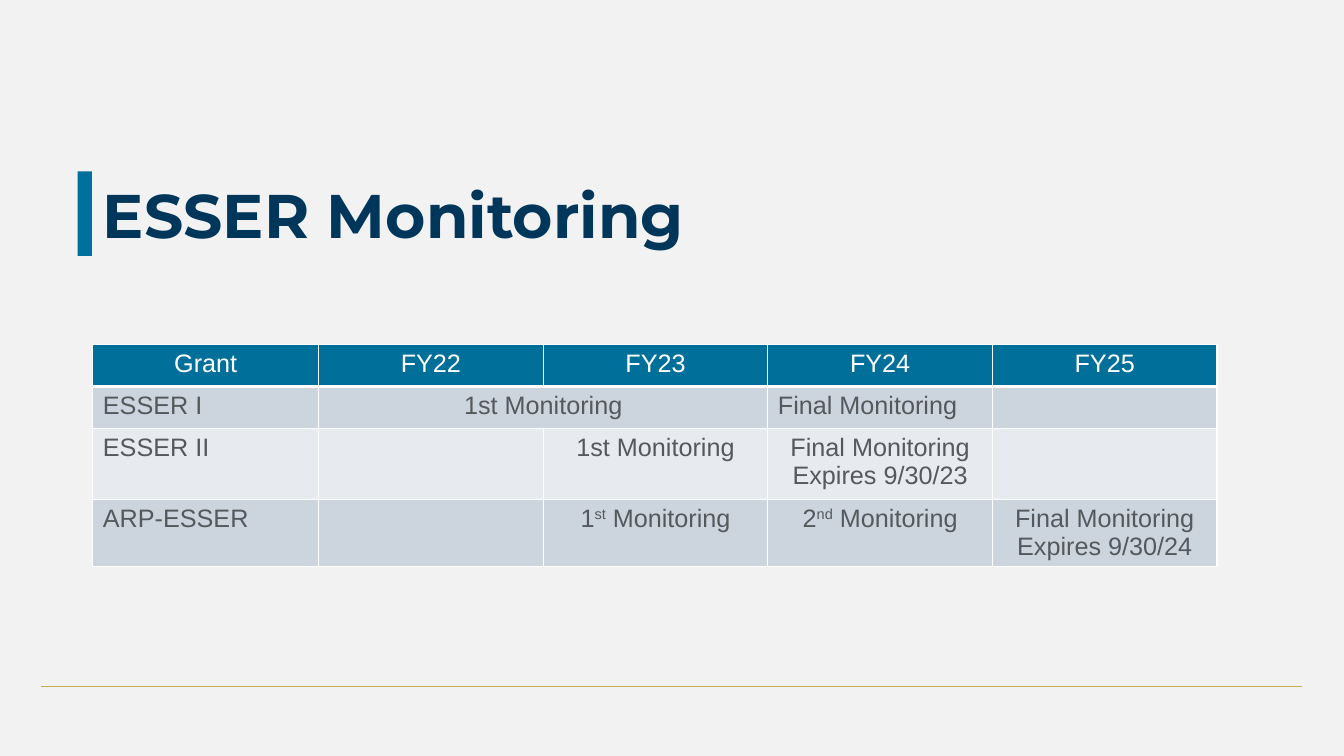
from lxml.etree import SubElement
from pptx import Presentation
from pptx.dml.color import RGBColor
from pptx.enum.shapes import MSO_CONNECTOR, MSO_SHAPE
from pptx.enum.text import MSO_ANCHOR, PP_ALIGN
from pptx.oxml.ns import qn
from pptx.util import Cm, Pt

NAVY, BLUE, HEADER_BLUE, GOLD = "00365A", "00719C", "00709B", "CAAB57"
WHITE, GREY, BACKGROUND = "FFFFFF", "55595C", "F2F2F2"
BANDS = ("CCD5DE", "E7EBEF")


def color(value):
    return RGBColor.from_string(value)


class SlideBuilder:
    def __init__(self, slide):
        self.slide = slide
        self.heading_font, self.body_font = "Montserrat", "Arial"
        slide.background.fill.solid()
        slide.background.fill.fore_color.rgb = color(BACKGROUND)

    def rule(self, left, top, right, shade):
        rule = self.slide.shapes.add_connector(
            MSO_CONNECTOR.STRAIGHT, Cm(left), Cm(top), Cm(right), Cm(top))
        rule.line.color.rgb = color(shade)
        rule.line.width = Pt(1)
        SubElement(rule._element.spPr, qn("a:effectLst"))

    def bar(self, left, top, width, height, shade):
        bar = self.slide.shapes.add_shape(
            MSO_SHAPE.RECTANGLE, Cm(left), Cm(top), Cm(width), Cm(height))
        bar.shadow.inherit = False
        bar.fill.solid()
        bar.fill.fore_color.rgb = color(shade)
        bar.line.fill.background()

    def title(self, left, top, width, height, text):
        title = self.slide.shapes.title
        title.left, title.top = Cm(left), Cm(top)
        title.width, title.height = Cm(width), Cm(height)
        title.text_frame.text = text
        title.text_frame.vertical_anchor = MSO_ANCHOR.MIDDLE
        heading = title.text_frame.paragraphs[0]
        heading.alignment = PP_ALIGN.LEFT
        heading.line_spacing = 0.9
        self.style(heading, self.heading_font, 44, NAVY, True)

    def style(self, paragraph, name, size, shade, bold=False):
        font = paragraph.font
        font.name, font.size, font.bold = name, Pt(size), bold
        font.color.rgb = color(shade)

    def table(self, left, top, widths, heights, rows, left_aligned):
        table = self.slide.shapes.add_table(
            len(heights), len(widths), Cm(left), Cm(top),
            Cm(sum(widths)), Cm(sum(heights))).table
        table.first_row = table.horz_banding = False
        for column, width in zip(table.columns, widths):
            column.width = Cm(width)
        for row, height in zip(table.rows, heights):
            row.height = Cm(height)
        for r, texts in enumerate(rows):
            for c, text in enumerate(texts):
                align = PP_ALIGN.LEFT if (r, c) in left_aligned else PP_ALIGN.CENTER
                self.cell(table.cell(r, c), text, align, r)
        return table

    def cell(self, cell, text, align, row):
        self.borders(cell, bottom=1 if row else 3)
        cell.fill.solid()
        cell.fill.fore_color.rgb = color(BANDS[(row - 1) % 2] if row else HEADER_BLUE)
        for i, line in enumerate(text.split("\n")):
            frame = cell.text_frame
            paragraph = frame.add_paragraph() if i else frame.paragraphs[0]
            paragraph.alignment = align
            self.style(paragraph, self.body_font, 18, GREY if row else WHITE)
            # Text between carets is raised
            for j, part in enumerate(line.split("^")):
                if part:
                    run = paragraph.add_run()
                    run.text = part
                    if j % 2:
                        run._r.get_or_add_rPr().set("baseline", "30000")

    def borders(self, cell, bottom):
        properties = cell._tc.get_or_add_tcPr()
        for side, points in (("L", 1), ("R", 1), ("T", 1), ("B", bottom)):
            edge = SubElement(properties, qn(f"a:ln{side}"), w=str(Pt(points)))
            fill = SubElement(edge, qn("a:solidFill"))
            SubElement(fill, qn("a:srgbClr"), val=WHITE)


def main():
    deck = Presentation()
    deck.slide_width, deck.slide_height = Cm(33.87), Cm(19.05)
    page = SlideBuilder(deck.slides.add_slide(deck.slide_layouts[5]))

    # Footer rule and title
    page.rule(1.04, 17.3, 32.82, GOLD)
    page.bar(1.96, 4.32, 0.36, 2.13, BLUE)
    page.title(2.34, 3.66, 29.21, 3.68, "ESSER Monitoring")

    # Monitoring schedule
    schedule = [
        ("Grant", "FY22", "FY23", "FY24", "FY25"),
        ("ESSER I", "1st Monitoring", "", "Final Monitoring", ""),
        ("ESSER II", "", "1st Monitoring", "Final Monitoring\nExpires 9/30/23", ""),
        ("ARP-ESSER", "", "1^st^ Monitoring", "2^nd^ Monitoring",
         "Final Monitoring\nExpires 9/30/24"),
    ]
    grants = page.table(2.34, 8.69, [5.69] + [5.66] * 4, [1.05, 1.05, 1.8, 1.68],
                        schedule, {(1, 0), (2, 0), (3, 0), (1, 3)})
    grants.cell(1, 1).merge(grants.cell(1, 2))

    deck.save("out.pptx")


if __name__ == "__main__":
    main()
